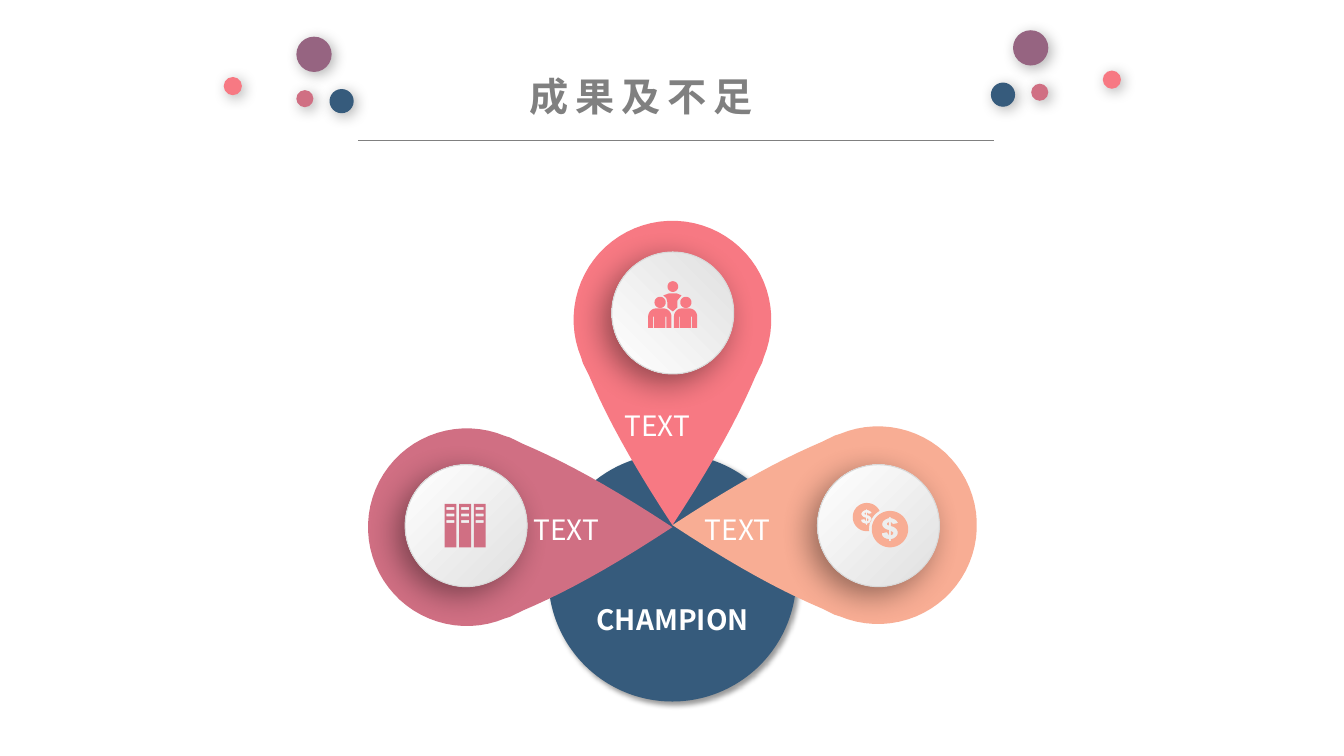
from dataclasses import dataclass
from math import cos, radians, sin

from lxml import etree
from pptx import Presentation
from pptx.dml.color import RGBColor
from pptx.enum.shapes import MSO_CONNECTOR, MSO_SHAPE
from pptx.enum.text import MSO_ANCHOR, PP_ALIGN
from pptx.oxml.ns import qn
from pptx.util import Pt

OVAL = MSO_SHAPE.OVAL
STRAIGHT = MSO_CONNECTOR.STRAIGHT
LEFT, RIGHT = PP_ALIGN.LEFT, PP_ALIGN.RIGHT
TOP, MIDDLE = MSO_ANCHOR.TOP, MSO_ANCHOR.MIDDLE
TITLE_ONLY = 5


@dataclass(frozen=True)
class Theme:
    font: str = "Noto Sans CJK SC"
    title_size: float = 28
    label_size: float = 20
    white: str = "FFFFFF"
    gray: str = "808080"
    navy: str = "365B7C"
    plum: str = "966481"
    rose: str = "D06F83"
    coral: str = "F77983"
    peach: str = "F8AD94"
    disc_dark: str = "E0E0E0"
    disc_line: str = "D9D9D9"
    shadow: str = "000000"


THEME = Theme()
CENTER_SHADOW = (40, 4, 3, 45)
DISC_SHADOW = (40, 22, 8, 135)
DOT_SHADOW = (30, 10, 3, 45)


def rgb(color):
    return RGBColor.from_string(color)


def arc(cx, cy, radius, start=0, end=360):
    """Points along an arc; angles run clockwise from the right."""
    steps = max(6, round(abs(end - start) / 5))
    angles = [radians(start + (end - start) * i / steps) for i in range(steps + 1)]
    return [(cx + radius * cos(a), cy + radius * sin(a)) for a in angles]


def curve(a, b, c, d, steps=10):
    """Points along a cubic Bezier curve."""
    points = []
    for i in range(steps + 1):
        t = i / steps
        weights = ((1 - t) ** 3, 3 * t * (1 - t) ** 2, 3 * t * t * (1 - t), t ** 3)
        points.append(tuple(sum(w * p[k] for w, p in zip(weights, (a, b, c, d)))
                            for k in (0, 1)))
    return points


def box_points(left, top, right, bottom):
    return [(left, top), (right, top), (right, bottom), (left, bottom)]


def moved(points, dx, dy, scale=1):
    return [(dx + x * scale, dy + y * scale) for x, y in points]


def petal_outline():
    side = [(134.6, 101.5)] + curve((130.3, 110.2), (118.1, 139), (100.8, 171.4), (70.6, 217.4))
    mirrored = [(141.2 - x, y) for x, y in reversed(side)]
    return [arc(70.6, 70.6, 70.6, 157.4, 382.6) + side + mirrored[1:]]


def server_icon():
    contours = []
    for left in (0, 10.45, 20.9):
        contours.append(box_points(left, 0, left + 8.5, 31))
        for top in (2.2, 6.9, 11.6):
            contours.append(box_points(left + 1.4, top, left + 7.1, top + 2))
    return contours


def people_icon():
    torso = [(10.8, 10.1), (15.1, 8.6), (20.2, 8.6), (23.8, 10.1), (20.9, 13.7),
             (20.9, 18.7), (17.6, 21.6), (13.7, 18.7), (13.7, 15.1), (13, 12.2)]
    body = arc(5.8, 25.2, 5.8, 180, 270) + arc(10.8, 25.2, 5.8, 270, 360)
    body += [(16.6, 33.3), (13, 33.3), (13, 25.2), (12.2, 25.2), (12.2, 33.3),
             (4.3, 33.3), (4.3, 25.2), (3.6, 25.2), (3.6, 33.3), (0, 33.3)]
    contours = [arc(17.6, 3.8, 3.8), torso]
    for offset in (0, 18.4):
        contours += [moved(body, offset, 0), arc(offset + 8.5, 15.1, 4)]
    return contours


def dollar_sign():
    outer = [(5.8, -4.3), (2.2, -3.6), (.7, -5), (.7, -2.2)]
    outer += curve((.7, -2.2), (7.2, -1), (7.2, 6), (.7, 7.2))
    outer += [(.7, 8.6), (-.7, 8.6), (-.7, 7.2)]
    outer += curve((-.7, 7.2), (-3.6, 6.8), (-5.8, 5.8), (-5.8, 2.9))
    outer += [(-2.2, 2.2), (-.7, 4.3), (-.7, .7)]
    outer += curve((-.7, .7), (-7.2, -.5), (-7.2, -6.5), (-.7, -7.9))
    outer += [(-.7, -8.6), (.7, -8.6), (.7, -7.9)]
    outer += curve((.7, -7.9), (2.9, -7.5), (5, -6.5), (5.8, -4.3))
    lower = [(.7, 4.3), (2.2, 3.6), (2.2, 2.2), (.7, 1.4)]
    upper = [(-.7, -5), (-2, -4.3), (-2, -3.2), (-.7, -2.6)]
    return [outer, lower, upper]


def coins_icon():
    back_coin = arc(10.1, 10.1, 10.1, 81.1, 333.9) + arc(26.6, 18.7, 15, 240.3, 174.7)
    contours = [arc(26.6, 18.7, 13), back_coin]
    for sign in dollar_sign():
        contours += [moved(sign, 26.6, 18.7), moved(sign, 9.8, 10.1, .65)]
    return contours


def cast_shadow(shape, opacity, blur, distance, direction):
    effects = shape._element.spPr.find(qn("a:effectLst"))
    outer = etree.SubElement(effects, qn("a:outerShdw"), blurRad=str(Pt(blur)),
                             dist=str(Pt(distance)), dir=str(direction * 60000),
                             algn="ctr", rotWithShape="0")
    color = etree.SubElement(outer, qn("a:srgbClr"), val=THEME.shadow)
    etree.SubElement(color, qn("a:alpha"), val=str(opacity * 1000))


def paint(shape, color):
    shape.fill.solid()
    shape.fill.fore_color.rgb = rgb(color)
    shape.line.fill.background()
    shape.shadow.inherit = False


def add_circle(page, left, top, size, color, shadow):
    circle = page.shapes.add_shape(OVAL, Pt(left), Pt(top), Pt(size), Pt(size))
    paint(circle, color)
    cast_shadow(circle, *shadow)
    return circle


def add_disc(page, left, top, angle):
    disc = add_circle(page, left, top, 87.1, THEME.white, DISC_SHADOW)
    disc.fill.gradient()
    disc.fill.gradient_angle = angle
    for stop, color in zip(disc.fill.gradient_stops, (THEME.disc_dark, THEME.white)):
        stop.color.rgb = rgb(color)
    disc.line.color.rgb = rgb(THEME.disc_line)
    disc.line.width = Pt(.75)


def add_outline(page, contours, left, top, color, rotation=0):
    first, *others = [[(Pt(x), Pt(y)) for x, y in contour] for contour in contours]
    builder = page.shapes.build_freeform(*first[0], scale=1.0)
    builder.add_line_segments(first[1:], close=True)
    for contour in others:
        builder.move_to(*contour[0])
        builder.add_line_segments(contour[1:], close=True)
    shape = builder.convert_to_shape(Pt(left), Pt(top))
    paint(shape, color)
    shape.rotation = rotation


def write(box, text, *, size, color, bold=False, align=LEFT, anchor=TOP,
          insets=(7.2, 0, 7.2, 0), wrap=True, spacing=0):
    frame = box.text_frame
    frame.word_wrap = wrap
    frame.vertical_anchor = anchor
    frame.margin_left, frame.margin_top, frame.margin_right, frame.margin_bottom = map(Pt, insets)
    para = frame.paragraphs[0]
    para.alignment = align
    para.line_spacing = 1.0
    span = para.add_run()
    span.text = text
    span.font.name = THEME.font
    span.font.size = Pt(size)
    span.font.bold = bold
    span.font.color.rgb = rgb(color)
    properties = span.font._element
    etree.SubElement(properties, qn("a:ea"), typeface=THEME.font)
    if spacing:
        properties.set("spc", str(spacing * 100))


def add_label(page, text, left, top, width, right_inset, bold=False):
    box = page.shapes.add_textbox(Pt(left), Pt(top), Pt(width), Pt(40.3))
    write(box, text, size=THEME.label_size, color=THEME.white, bold=bold,
          align=RIGHT, insets=(7.2, 0, right_inset, 0))


def add_title(page, text):
    title = page.shapes.title
    title.left, title.top, title.width, title.height = Pt(370.8), Pt(48.2), Pt(181.4), Pt(41)
    write(title, text, size=THEME.title_size, color=THEME.gray, bold=True,
          anchor=MIDDLE, insets=(7.2, 3.6, 7.2, 3.6), wrap=False, spacing=5)
    rule = page.shapes.add_connector(STRAIGHT, Pt(255.6), Pt(100.1), Pt(709.9), Pt(100.1))
    rule.line.color.rgb = rgb(THEME.gray)
    rule.line.width = Pt(.5)
    etree.SubElement(rule._element.spPr, qn("a:effectLst"))


def add_dots(page):
    """Place the dots on the right and their mirror, slightly lower, on the left."""
    dots = [(736.6, 59.8, 12.2, THEME.rose), (723.6, 21.6, 25.2, THEME.plum),
            (707.8, 59, 17.3, THEME.navy), (787.7, 50.4, 13, THEME.coral)]
    for left, top, size, color in dots:
        add_circle(page, 960.5 - left - size, top + 4.6, size, color, DOT_SHADOW)
        add_circle(page, left, top, size, color, DOT_SHADOW)


def main():
    deck = Presentation()
    deck.slide_width, deck.slide_height = Pt(960), Pt(540)
    page = deck.slides.add_slide(deck.slide_layouts[TITLE_ONLY])
    add_title(page, "成果及不足")
    add_circle(page, 391.7, 324, 177.1, THEME.navy, CENTER_SHADOW)
    add_label(page, "CHAMPION", 411.8, 430.6, 131, 8, bold=True)
    petals = [
        (THEME.rose, (301, 267.8, 270), (289.4, 331.9, 135), server_icon(), (317.5, 360), (359.3, 365.8)),
        (THEME.peach, (518.4, 266.4, 90), (583.9, 331.9, 135), coins_icon(), (609.1, 359.3), (481.7, 365.8)),
        (THEME.coral, (409.7, 157.7, 0), (437, 180, 225), people_icon(), (463, 200.9), (424.1, 291.6)),
    ]
    for color, (left, top, rotation), disc, icon, icon_at, label_at in petals:
        add_outline(page, petal_outline(), left, top, color, rotation)
        add_disc(page, *disc)
        add_outline(page, icon, *icon_at, color)
        add_label(page, "TEXT", *label_at, 85.7, 17)
    add_dots(page)
    deck.save("out.pptx")


if __name__ == "__main__":
    main()
